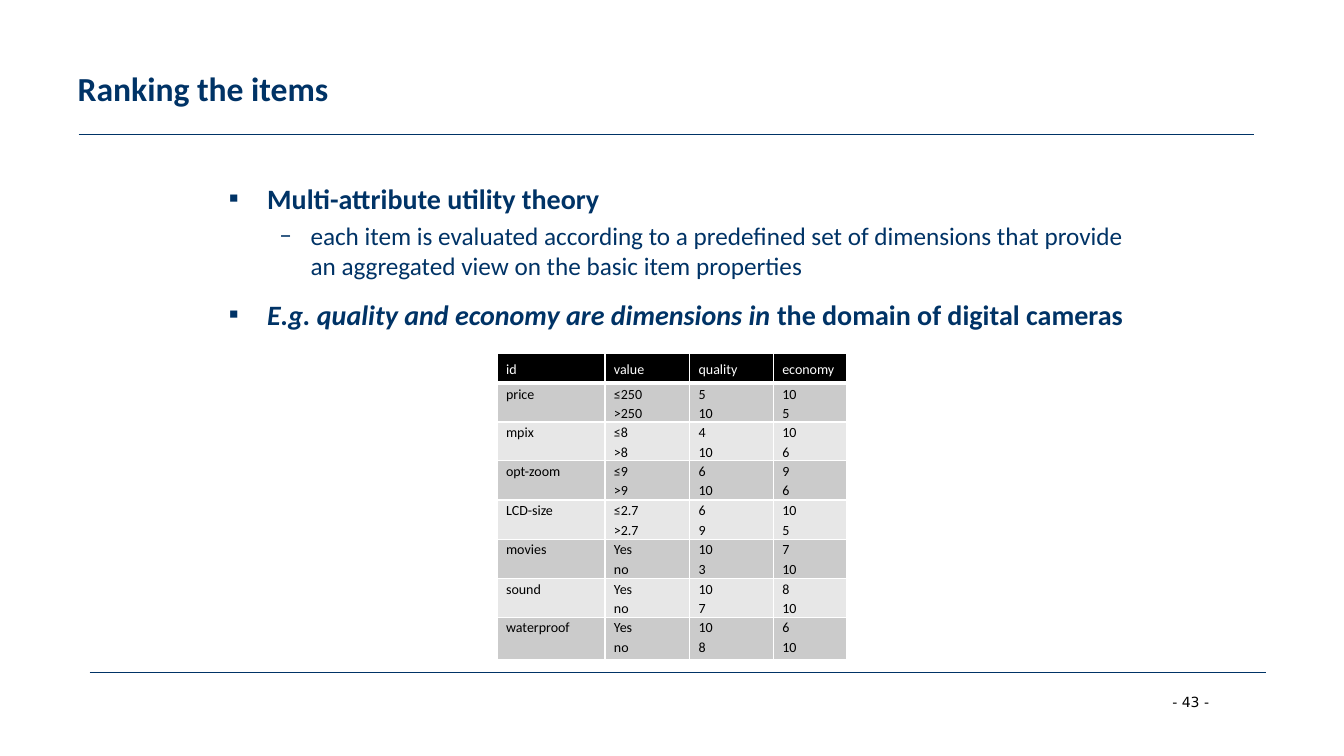
from dataclasses import dataclass

from lxml.etree import SubElement
from pptx import Presentation
from pptx.dml.color import RGBColor
from pptx.enum.shapes import MSO_CONNECTOR
from pptx.enum.text import MSO_ANCHOR, MSO_AUTO_SIZE, PP_ALIGN
from pptx.oxml.ns import qn
from pptx.util import Inches, Pt

COLOURS = {
    "navy": "003366",
    "black": "000000",
    "white": "FFFFFF",
    "dark_band": "CBCBCB",
    "light_band": "E7E7E7",
}
FONT = "Calibri"


@dataclass(frozen=True)
class Span:
    text: str
    bold: bool = False
    italic: bool = False


@dataclass(frozen=True)
class Bullet:
    spans: tuple[Span, ...]
    level: int
    size: float
    symbol: str
    margin: float
    hanging: float
    space_before: float


@dataclass(frozen=True)
class Rule:
    left: float
    top: float
    right: float


@dataclass(frozen=True)
class Attribute:
    name: str
    values: tuple[str, str]
    quality: tuple[int, int]
    economy: tuple[int, int]


def main_point(*spans: Span) -> Bullet:
    return Bullet(spans, 0, 20, "▪", 0.38, 0.38, 12)


def sub_point(*spans: Span) -> Bullet:
    return Bullet(spans, 1, 18, "–", 0.81, 0.31, 3.6)


RULES = (Rule(0.78, 1.33, 12.44), Rule(0.89, 6.67, 12.56))
BULLETS = (
    main_point(Span("Multi-attribute utility theory", bold=True)),
    sub_point(Span("each item is evaluated according to a predefined set of dimensions "
                   "that provide an aggregated view on the basic item properties")),
    main_point(Span("E.g. quality and economy are dimensions in ", bold=True, italic=True),
               Span("the domain of digital cameras", bold=True)),
)
HEADINGS = ("id", "value", "quality", "economy")
ATTRIBUTES = (
    Attribute("price", ("≤250", ">250"), (5, 10), (10, 5)),
    Attribute("mpix", ("≤8", ">8"), (4, 10), (10, 6)),
    Attribute("opt-zoom", ("≤9", ">9"), (6, 10), (9, 6)),
    Attribute("LCD-size", ("≤2.7", ">2.7"), (6, 9), (10, 5)),
    Attribute("movies", ("Yes", "no"), (10, 3), (7, 10)),
    Attribute("sound", ("Yes", "no"), (10, 7), (8, 10)),
    Attribute("waterproof", ("Yes", "no"), (10, 8), (6, 10)),
)
COLUMN_WIDTHS = (1.07, 0.84, 0.83, 0.73)
ROW_HEIGHTS = (0.28, 0.35, 0.37, 0.39, 0.39, 0.39, 0.35, 0.42)


def place(shape, left: float, top: float, width: float, height: float) -> None:
    shape.left, shape.top = Inches(left), Inches(top)
    shape.width, shape.height = Inches(width), Inches(height)


def format_font(font, size: float, colour: str, bold: bool = False,
                italic: bool = False, name: str = FONT) -> None:
    font.name, font.size = name, Pt(size)
    font.bold, font.italic = bold, italic
    font.color.rgb = RGBColor.from_string(COLOURS[colour])


def add_rule(page, rule: Rule) -> None:
    line = page.shapes.add_connector(
        MSO_CONNECTOR.STRAIGHT, Inches(rule.left), Inches(rule.top),
        Inches(rule.right), Inches(rule.top))
    line.line.color.rgb = RGBColor.from_string(COLOURS["navy"])
    line.line.width = Pt(0.75)
    SubElement(line._element.spPr, qn("a:effectLst"))


def fill_title(page) -> None:
    title = page.shapes.title
    place(title, 0.67, 0.25, 12, 1.25)
    frame = title.text_frame
    frame.text = "Ranking the items"
    frame.vertical_anchor = MSO_ANCHOR.MIDDLE
    frame.paragraphs[0].alignment = PP_ALIGN.LEFT
    format_font(frame.paragraphs[0].runs[0].font, 24, "navy", bold=True)


def format_bullet(paragraph, bullet: Bullet) -> None:
    paragraph.level = bullet.level
    paragraph.space_before = Pt(bullet.space_before)
    properties = paragraph._p.get_or_add_pPr()
    properties.set("marL", str(Inches(bullet.margin)))
    properties.set("indent", str(-Inches(bullet.hanging)))
    SubElement(properties, qn("a:buFont")).set("typeface", FONT)
    SubElement(properties, qn("a:buChar")).set("char", bullet.symbol)
    for span in bullet.spans:
        run = paragraph.add_run()
        run.text = span.text
        format_font(run.font, bullet.size, "navy", span.bold, span.italic)


def fill_body(page) -> None:
    body = page.placeholders[1]
    place(body, 2.17, 1.75, 9.15, 4.95)
    frame = body.text_frame
    frame.auto_size = MSO_AUTO_SIZE.NONE
    frame.text = "\n" * (len(BULLETS) - 1)
    for paragraph, bullet in zip(frame.paragraphs, BULLETS):
        format_bullet(paragraph, bullet)


def add_page_number(page) -> None:
    box = page.shapes.add_textbox(Inches(11.53), Inches(6.83), Inches(0.67), Inches(0.27))
    frame = box.text_frame
    frame.text = "- 43 -"
    frame.word_wrap = False
    frame.auto_size = MSO_AUTO_SIZE.SHAPE_TO_FIT_TEXT
    format_font(frame.paragraphs[0].runs[0].font, 10, "black", name="DejaVu Sans")


def add_borders(cell, top: float, bottom: float) -> None:
    properties = cell._tc.get_or_add_tcPr()
    for side, width in (("L", 1), ("R", 1), ("T", top), ("B", bottom)):
        line = SubElement(properties, qn(f"a:ln{side}"), w=str(Pt(width)))
        fill = SubElement(line, qn("a:solidFill"))
        SubElement(fill, qn("a:srgbClr"), val=COLOURS["white"])


def fill_cell(cell, text: str, row: int) -> None:
    heading = row == 0
    band = "black" if heading else "dark_band" if row % 2 else "light_band"
    add_borders(cell, 3 if row == 1 else 1, 3 if heading else 1)
    cell.fill.solid()
    cell.fill.fore_color.rgb = RGBColor.from_string(COLOURS[band])
    cell.margin_left = cell.margin_right = Inches(0.09)
    cell.margin_top = cell.margin_bottom = Inches(0.05 if heading else 0)
    cell.text_frame.text = text
    for paragraph in cell.text_frame.paragraphs:
        paragraph.line_spacing = 1.15
        format_font(paragraph.runs[0].font, 10, "white" if heading else "black")
    cell.text_frame.paragraphs[-1].space_after = Pt(10)


def add_ratings(page) -> None:
    rows = [HEADINGS]
    for item in ATTRIBUTES:
        pairs = (item.values, item.quality, item.economy)
        rows.append((item.name, *("\n".join(map(str, pair)) for pair in pairs)))
    table = page.shapes.add_table(
        len(rows), len(HEADINGS), Inches(4.93), Inches(3.51),
        Inches(sum(COLUMN_WIDTHS)), Inches(sum(ROW_HEIGHTS))).table
    for column, width in zip(table.columns, COLUMN_WIDTHS):
        column.width = Inches(width)
    for row, (texts, height) in enumerate(zip(rows, ROW_HEIGHTS)):
        table.rows[row].height = Inches(height)
        for column, text in enumerate(texts):
            fill_cell(table.cell(row, column), text, row)


def main() -> None:
    deck = Presentation()
    deck.slide_width, deck.slide_height = Inches(13.33), Inches(7.5)
    page = deck.slides.add_slide(deck.slide_layouts[1])
    for rule in RULES:
        add_rule(page, rule)
    add_page_number(page)
    fill_title(page)
    fill_body(page)
    add_ratings(page)
    deck.save("out.pptx")


if __name__ == "__main__":
    main()
